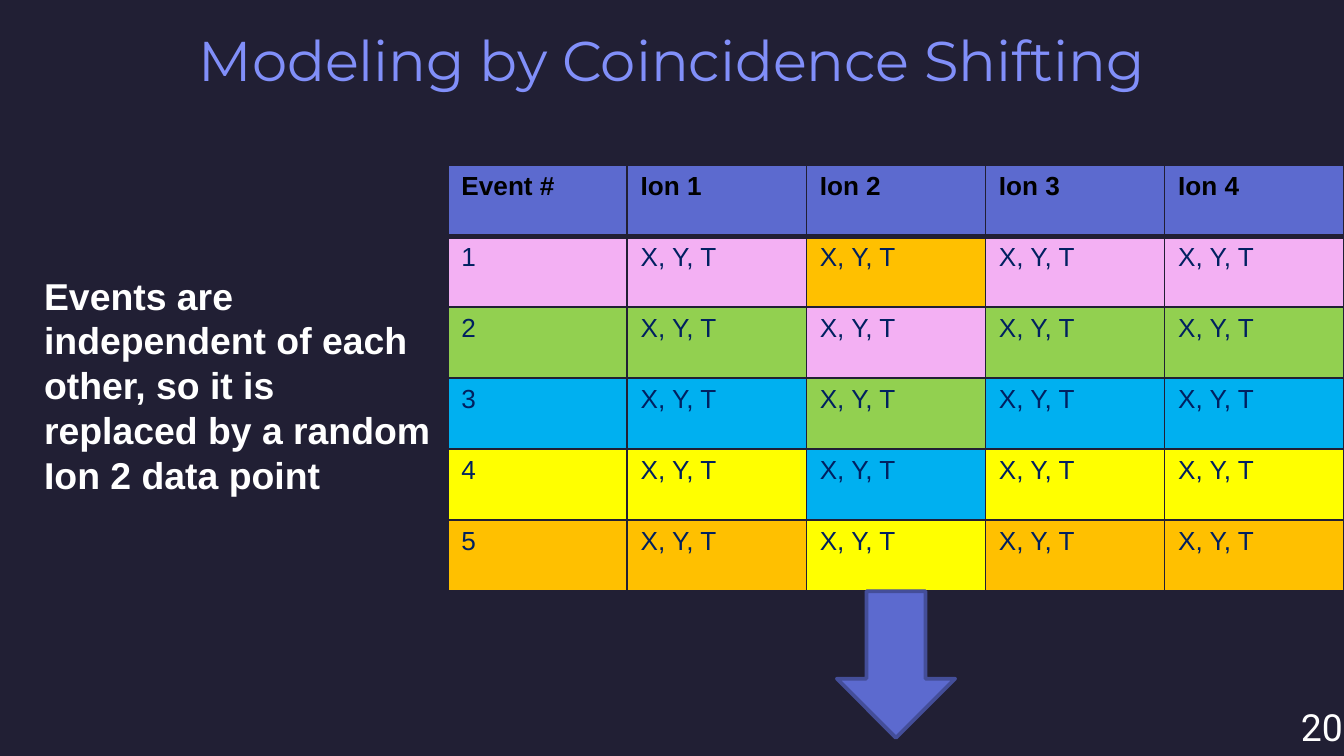
from dataclasses import dataclass

from lxml.etree import SubElement
from pptx import Presentation
from pptx.dml.color import RGBColor
from pptx.enum.shapes import MSO_SHAPE as Preset
from pptx.enum.text import MSO_ANCHOR as Anchor, PP_ALIGN as Align
from pptx.oxml.ns import qn
from pptx.util import Inches, Pt

WIDTH = 10
HEIGHT = WIDTH * 9 / 16
COLUMNS, ROWS = 5, 6
TABLE_LEFT, TABLE_TOP = WIDTH / 3, 1.23
COLUMN = (WIDTH - TABLE_LEFT) / COLUMNS
ROW = 3.17 / ROWS

COLORS = {
    "background": "211F34",
    "title": "818FF9",
    "accent": "5C6ACF",
    "outline": "444E99",
    "header text": "000000",
    "cell text": "002060",
    "white": "FFFFFF",
}
EVENT_COLORS = ["F3B0F3", "92D050", "00B0F0", "FFFF00", "FFC000"]
HEADERS = ["Event #"] + [f"Ion {number}" for number in range(1, COLUMNS)]
SHIFTED_COLUMN = HEADERS.index("Ion 2")


@dataclass
class Area:
    """A rectangle in inches."""
    left: float
    top: float
    width: float
    height: float

    def lengths(self) -> list:
        return [Inches(n) for n in (self.left, self.top, self.width, self.height)]


@dataclass
class Style:
    size: int
    font: str
    color: str
    bold: bool = False


@dataclass
class Label:
    text: str
    area: Area
    style: Style
    wrap: bool


HEADER_STYLE = Style(14, "Arial", COLORS["header text"], True)
CELL_STYLE = Style(14, "Arial", COLORS["cell text"])

LABELS = [
    Label("Events are independent of each other, so it is replaced by a random "
          "Ion 2 data point", Area(0.23, 1.98, 3.1, 2.12),
          Style(20, "Arial", COLORS["white"], True), True),
    Label("20", Area(9.58, 5.19, 0.51, 0.44),
          Style(20, "Roboto", COLORS["white"]), False),
]


def rgb(color: str) -> RGBColor:
    return RGBColor.from_string(color)


def apply_style(para, style: Style) -> None:
    font = para.font
    font.size, font.name, font.bold = Pt(style.size), style.font, style.bold
    font.color.rgb = rgb(style.color)


def add_label(page, label: Label) -> None:
    frame = page.shapes.add_textbox(*label.area.lengths()).text_frame
    frame.word_wrap = label.wrap
    para = frame.paragraphs[0]
    para.text = label.text
    apply_style(para, label.style)


def add_borders(cell, row: int) -> None:
    """The line between the header and the first event is thicker."""
    points = {"L": 1, "R": 1, "T": 3 if row == 1 else 1, "B": 3 if row == 0 else 1}
    properties = cell._tc.get_or_add_tcPr()
    for side, width in points.items():
        line = SubElement(properties, qn(f"a:ln{side}"), w=str(Pt(width)))
        fill = SubElement(line, qn("a:solidFill"))
        SubElement(fill, qn("a:srgbClr"), val=COLORS["background"])


def fill_cell(cell, row: int, text: str, color: str) -> None:
    add_borders(cell, row)
    cell.fill.solid()
    cell.fill.fore_color.rgb = rgb(color)
    para = cell.text_frame.paragraphs[0]
    para.text = text
    apply_style(para, CELL_STYLE if row else HEADER_STYLE)


def add_event_table(page) -> None:
    area = Area(TABLE_LEFT, TABLE_TOP, COLUMN * COLUMNS, ROW * ROWS)
    table = page.shapes.add_table(ROWS, COLUMNS, *area.lengths()).table
    for column, header in enumerate(HEADERS):
        fill_cell(table.cell(0, column), 0, header, COLORS["accent"])
        # Ion 2 takes the colour of the event before, the first from the last
        shift = 1 if column == SHIFTED_COLUMN else 0
        for event in range(len(EVENT_COLORS)):
            text = "X, Y, T" if column else str(event + 1)
            fill_cell(table.cell(event + 1, column), event + 1, text,
                      EVENT_COLORS[event - shift])


def add_shift_arrow(page) -> None:
    """The arrow hangs below the middle of the shifted column."""
    width = 0.88
    center = TABLE_LEFT + (SHIFTED_COLUMN + 0.5) * COLUMN
    area = Area(center - width / 2, TABLE_TOP + ROWS * ROW, width, 1.09)
    arrow = page.shapes.add_shape(Preset.DOWN_ARROW, *area.lengths())
    arrow.shadow.inherit = False
    arrow.fill.solid()
    arrow.fill.fore_color.rgb = rgb(COLORS["accent"])
    arrow.line.color.rgb = rgb(COLORS["outline"])
    arrow.line.width = Pt(2)


def set_title(page, text: str) -> None:
    title = page.shapes.title
    title.left, title.top, title.width, title.height = Area(0, 0, WIDTH, 0.94).lengths()
    frame = title.text_frame
    frame.vertical_anchor = Anchor.MIDDLE
    frame.margin_left = frame.margin_right = Inches(0.07)
    frame.margin_top = frame.margin_bottom = Inches(0.04)
    para = frame.paragraphs[0]
    para.text = text
    para.alignment = Align.CENTER
    para.line_spacing = 0.9
    apply_style(para, Style(30, "Montserrat", COLORS["title"]))


def main() -> None:
    deck = Presentation()
    deck.slide_width, deck.slide_height = Inches(WIDTH), Inches(HEIGHT)
    page = deck.slides.add_slide(deck.slide_layouts.get_by_name("Title Only"))
    page.background.fill.solid()
    page.background.fill.fore_color.rgb = rgb(COLORS["background"])

    # Title, table and arrow
    set_title(page, "Modeling by Coincidence Shifting")
    add_event_table(page)
    add_shift_arrow(page)

    # Explanation and page number
    for label in LABELS:
        add_label(page, label)

    deck.save("out.pptx")


if __name__ == "__main__":
    main()
